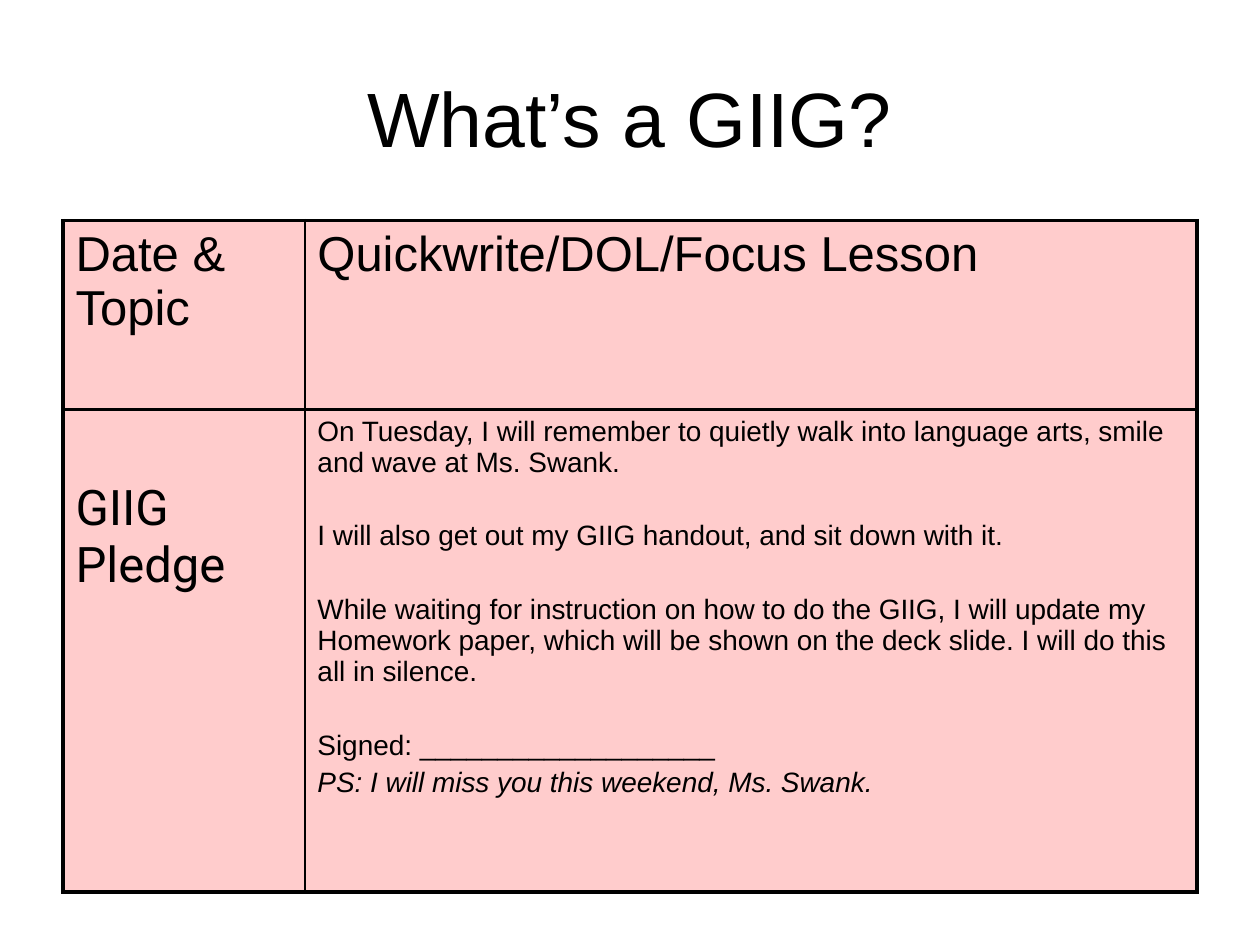
from pptx import Presentation
from pptx.dml.color import RGBColor
from pptx.enum.text import MSO_ANCHOR, PP_ALIGN
from pptx.oxml.xmlchemy import OxmlElement
from pptx.util import Inches, Pt

COLORS = {"text": "000000", "border": "000000", "cell": "FFCCCC"}
COLUMNS = [1.92, 7.08]
ROWS = [1.5, 3.83]
THICK, THIN = 2.25, 1
PARAGRAPH_GAP = 3.3
BLOCK_GAP = 24.4
HEADINGS = ["Date & Topic", "Quickwrite/DOL/Focus Lesson"]
PLEDGE = [
    ("On Tuesday, I will remember to quietly walk into language arts, "
     "smile and wave at Ms. Swank.", {}),
    ("I will also get out my GIIG handout, and sit down with it.",
     {"before": BLOCK_GAP}),
    ("While waiting for instruction on how to do the GIIG, I will update my "
     "Homework paper, which will be shown on the deck slide. I will do this "
     "all in silence.", {"before": BLOCK_GAP}),
    ("Signed: ___________________", {"before": BLOCK_GAP}),
    ("PS: I will miss you this weekend, Ms. Swank.",
     {"before": PARAGRAPH_GAP, "italic": True}),
]


def write(paragraph, text, size=28, font="Arial", italic=False,
          align=PP_ALIGN.LEFT, before=0):
    paragraph.alignment = align
    paragraph.space_before = Pt(before)
    run = paragraph.add_run()
    run.text = text
    run.font.size = Pt(size)
    run.font.name = font
    run.font.italic = italic
    run.font.color.rgb = RGBColor.from_string(COLORS["text"])


def set_borders(cell, widths):
    properties = cell._tc.get_or_add_tcPr()
    for position, (side, width) in enumerate(widths.items()):
        line = OxmlElement(f"a:ln{side}")
        line.set("w", str(Pt(width)))
        fill = OxmlElement("a:solidFill")
        color = OxmlElement("a:srgbClr")
        color.set("val", COLORS["border"])
        fill.append(color)
        line.append(fill)
        properties.insert(position, line)


def add_title(slide, left, top, width, height):
    title = slide.shapes.title
    title.left, title.top = Inches(left), Inches(top)
    title.width, title.height = Inches(width), Inches(height)
    title.text_frame.vertical_anchor = MSO_ANCHOR.MIDDLE
    write(title.text_frame.paragraphs[0], "What’s a GIIG?", size=44,
          align=PP_ALIGN.CENTER)


def add_pledge_table(slide, left, top, width, height):
    table = slide.shapes.add_table(
        len(ROWS), len(COLUMNS), Inches(left), Inches(top),
        Inches(width), Inches(height)).table
    table.first_row = table.horz_banding = False
    for column, share in zip(table.columns, COLUMNS):
        column.width = Inches(width * share / sum(COLUMNS))
    for row, share in zip(table.rows, ROWS):
        row.height = Inches(height * share / sum(ROWS))
        for index, cell in enumerate(row.cells):
            cell.fill.solid()
            cell.fill.fore_color.rgb = RGBColor.from_string(COLORS["cell"])
            set_borders(cell, {"L": THIN if index else THICK,
                               "R": THICK if index else THIN,
                               "T": THICK, "B": THICK})

    for index, heading in enumerate(HEADINGS):
        write(table.cell(0, index).text_frame.paragraphs[0], heading)

    topic = table.cell(1, 0)
    topic.margin_top = Inches(0.56)
    write(topic.text_frame.paragraphs[0], "GIIG Pledge", font="Roboto")

    frame = table.cell(1, 1).text_frame
    for index, (text, style) in enumerate(PLEDGE):
        paragraph = frame.add_paragraph() if index else frame.paragraphs[0]
        write(paragraph, text, size=16, **style)


def main():
    presentation = Presentation()
    presentation.slide_width = Inches(10)
    presentation.slide_height = Inches(7.5)
    slide = presentation.slides.add_slide(presentation.slide_layouts[5])
    add_title(slide, 0.5, 0.3, 9, 1.25)
    add_pledge_table(slide, 0.5, 1.75, 9, sum(ROWS))
    presentation.save("out.pptx")


if __name__ == "__main__":
    main()
